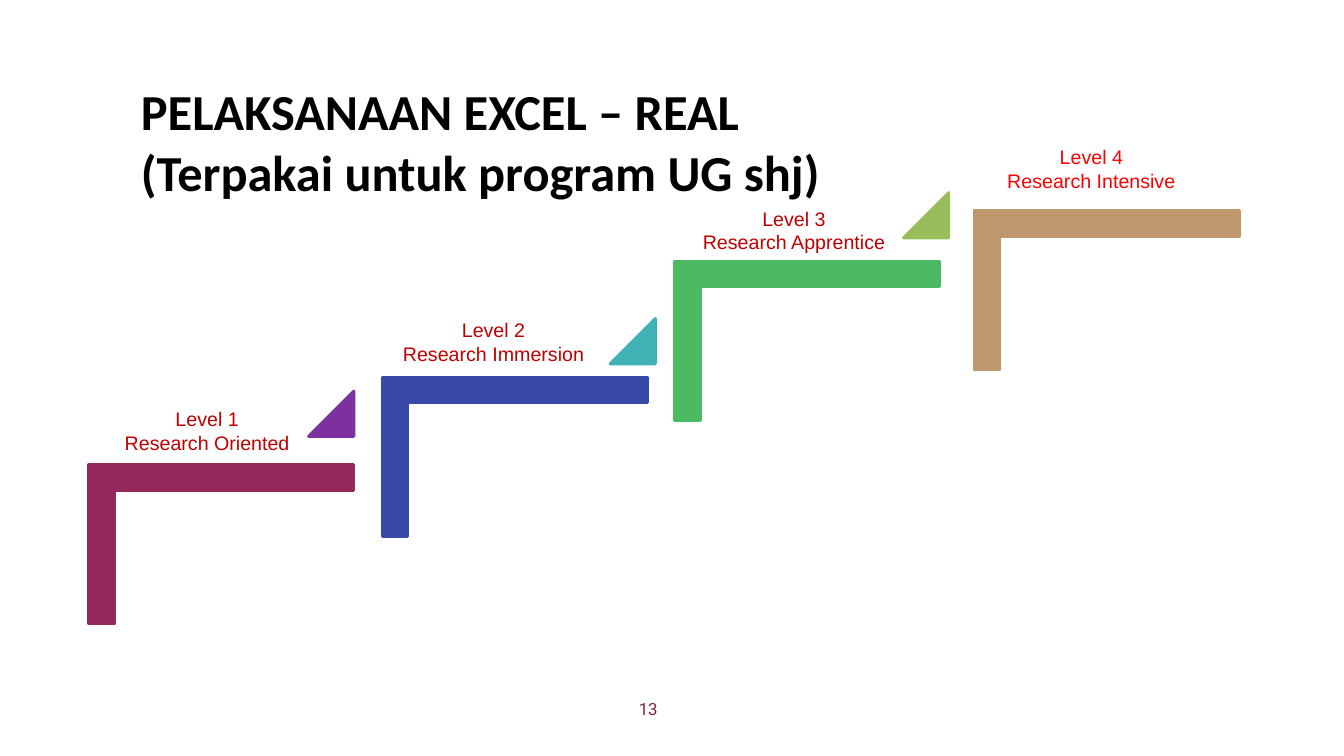
from typing import NamedTuple

from pptx import Presentation
from pptx.dml.color import RGBColor
from pptx.enum.shapes import MSO_SHAPE
from pptx.enum.text import MSO_ANCHOR, PP_ALIGN
from pptx.util import Inches, Pt

CORNER, TRIANGLE = MSO_SHAPE.CORNER, MSO_SHAPE.ISOSCELES_TRIANGLE
LEFT, CENTER = PP_ALIGN.LEFT, PP_ALIGN.CENTER
TOP, MIDDLE = MSO_ANCHOR.TOP, MSO_ANCHOR.MIDDLE

BLACK = RGBColor(0x00, 0x00, 0x00)
DARK_RED = RGBColor(0xC0, 0x00, 0x00)
RED = RGBColor(0xFF, 0x00, 0x00)
WINE = RGBColor(0x83, 0x23, 0x3E)
PLUM = RGBColor(0x95, 0x29, 0x5C)
PURPLE = RGBColor(0x7D, 0x31, 0x9F)
BLUE = RGBColor(0x39, 0x48, 0xA9)
TEAL = RGBColor(0x40, 0xB1, 0xB4)
GREEN = RGBColor(0x4C, 0xBA, 0x62)
LIME = RGBColor(0x99, 0xBD, 0x5B)
TAN = RGBColor(0xBE, 0x98, 0x6C)

PAGE_WIDTH, PAGE_HEIGHT = 13.33, 7.5
STEP_WIDTH, STEP_HEIGHT = 2.63, 1.58
ARM_SHARE = 0.161
MARKER_SIZE = 0.45
LABEL_HEIGHT = 0.57


class Step(NamedTuple):
    """One stair; marker and label offsets are measured from its top left."""
    label: str
    left: float
    top: float
    color: RGBColor
    label_color: RGBColor
    label_offset: tuple
    label_width: float
    marker_offset: tuple = ()
    marker_color: RGBColor = BLACK


STEPS = [
    Step("Level 1\nResearch Oriented", 0.88, 4.61, PLUM, DARK_RED,
         (-0.04, -0.62), 2.43, (2.18, -0.73), PURPLE),
    Step("Level 2\nResearch Immersion", 3.79, 3.74, BLUE, DARK_RED,
         (-0.07, -0.63), 2.35, (2.26, -0.58), TEAL),
    Step("Level 3\nResearch Apprentice", 6.69, 2.59, GREEN, DARK_RED,
         (-0.09, -0.59), 2.55, (2.27, -0.68), LIME),
    Step("Level 4\nResearch Intensive", 9.66, 2.09, TAN, RED,
         (-0.05, -0.7), 2.43),
]


def add_text(page, box, text, font, size, color, align=CENTER, anchor=TOP, bold=False):
    frame = page.shapes.add_textbox(*map(Inches, box)).text_frame
    frame.word_wrap = True
    frame.vertical_anchor = anchor
    frame.text = text
    for para in frame.paragraphs:
        para.alignment = align
        for span in para.runs:
            span.font.name = font
            span.font.size = Pt(size)
            span.font.bold = bold
            span.font.color.rgb = color


def add_solid(page, kind, box, color):
    shape = page.shapes.add_shape(kind, *map(Inches, box))
    shape.shadow.inherit = False
    shape.fill.solid()
    shape.fill.fore_color.rgb = color
    shape.line.color.rgb = color
    shape.line.width = Pt(2)
    return shape


def add_step(page, step):
    # The corner is turned upright, so its unrotated box shares the same centre.
    shift = (STEP_WIDTH - STEP_HEIGHT) / 2
    box = (step.left + shift, step.top - shift, STEP_HEIGHT, STEP_WIDTH)
    stair = add_solid(page, CORNER, box, step.color)
    stair.rotation = 90
    for index in range(2):
        stair.adjustments[index] = ARM_SHARE

    if step.marker_offset:
        across, down = step.marker_offset
        box = (step.left + across, step.top + down, MARKER_SIZE, MARKER_SIZE)
        marker = add_solid(page, TRIANGLE, box, step.marker_color)
        marker.adjustments[0] = 1

    across, down = step.label_offset
    box = (step.left + across, step.top + down, step.label_width, LABEL_HEIGHT)
    add_text(page, box, step.label, "Arial", 14, step.label_color)


def main():
    deck = Presentation()
    deck.slide_width, deck.slide_height = Inches(PAGE_WIDTH), Inches(PAGE_HEIGHT)
    page = deck.slides.add_slide(deck.slide_layouts[6])
    for step in STEPS:
        add_step(page, step)
    add_text(page, (1.3, 0.75, 7.66, 1.31),
             "PELAKSANAAN EXCEL – REAL (Terpakai untuk program UG shj)",
             "Calibri", 36, BLACK, align=LEFT, bold=True)
    add_text(page, (4.93, 6.83, 3, 0.4), "13", "Roboto", 12, WINE, anchor=MIDDLE)
    deck.save("out.pptx")


if __name__ == "__main__":
    main()
